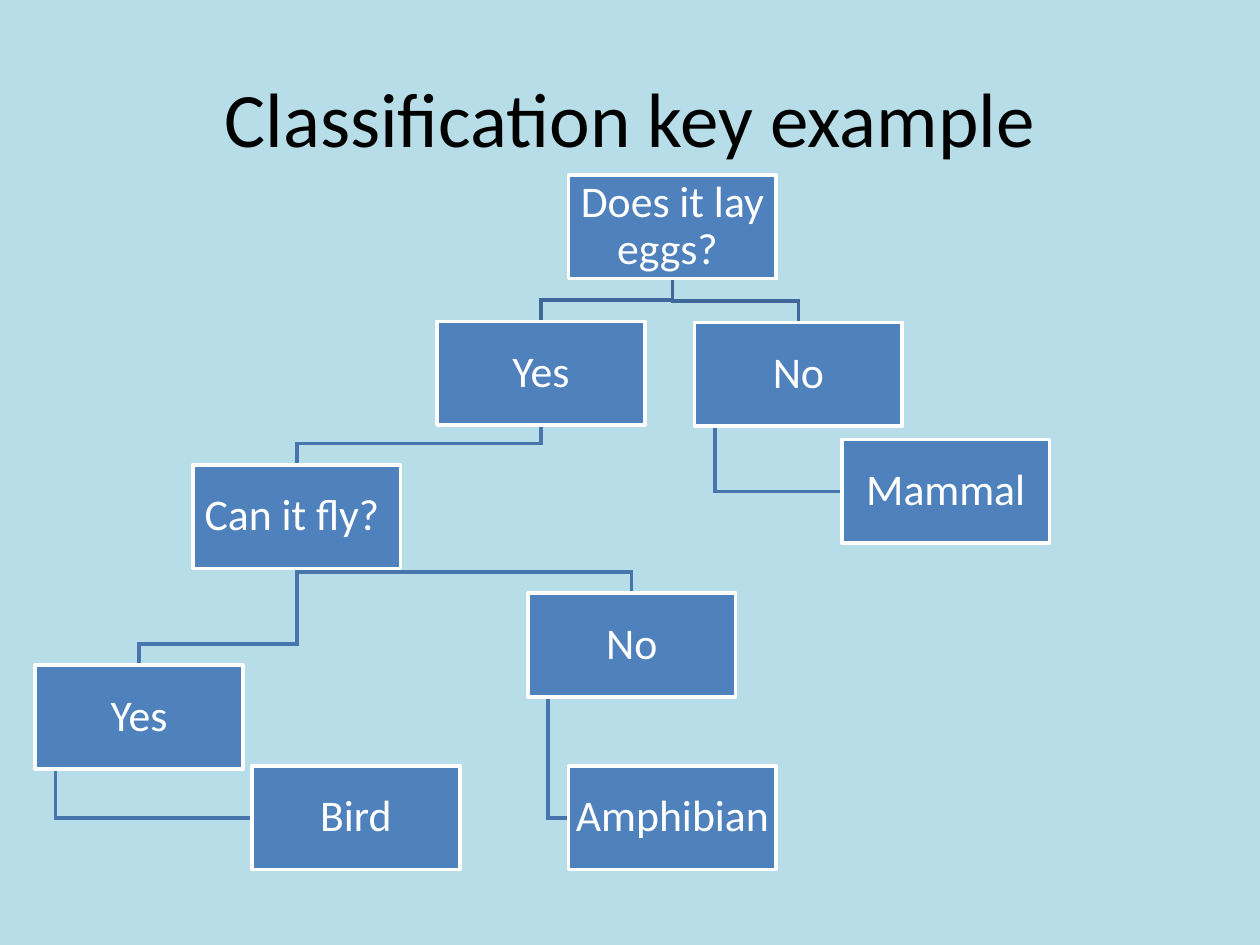
from dataclasses import dataclass

from lxml.etree import SubElement
from pptx import Presentation
from pptx.dml.color import RGBColor as Rgb
from pptx.enum.shapes import MSO_SHAPE as Kind
from pptx.enum.text import MSO_ANCHOR as Anchor, PP_ALIGN as Align
from pptx.oxml.ns import qn
from pptx.util import Cm, Pt


@dataclass(frozen=True)
class Theme:
    back: Rgb = Rgb(0xB7, 0xDE, 0xE8)
    ink: Rgb = Rgb(0, 0, 0)
    box: Rgb = Rgb(0x4F, 0x81, 0xBD)
    edge: Rgb = Rgb(0xFF, 0xFF, 0xFF)
    top: Rgb = Rgb(0x3F, 0x67, 0x97)
    low: Rgb = Rgb(0x48, 0x75, 0xAC)
    font: str = "Calibri"
    head: Pt = Pt(44)
    body: Pt = Pt(25)
    line: Pt = Pt(2)


def style(par, size, color):
    par.alignment = Align.CENTER
    par.font.name = theme.font
    par.font.size = size
    par.font.color.rgb = color


theme = Theme()
wide, high = 4.19, 2.09
drop, inset = 0.43, 0.41

nodes = {
    "eggs": ("Does it lay eggs? ", 11.46, 3.53),
    "lays": ("Yes", 8.81, 6.48),
    "fly": ("Can it fly? ", 3.89, 9.37),
    "walks": ("No", 10.64, 11.96),
    "frog": ("Amphibian", 11.46, 15.44),
    "flies": ("Yes", 0.71, 13.41),
    "bird": ("Bird", 5.08, 15.44),
    "live": ("No", 14, 6.5),
    "mammal": ("Mammal", 16.97, 8.86),
}
links = [
    ("live", "mammal"), ("eggs", "live"), ("flies", "bird"), ("fly", "flies"),
    ("walks", "frog"), ("fly", "walks"), ("lays", "fly"), ("eggs", "lays"),
]
leaves = {"mammal", "bird", "frog"}

deck = Presentation()
deck.slide_width, deck.slide_height = Cm(25.4), Cm(19.05)
slide = deck.slides.add_slide(deck.slide_layouts[5])
slide.background.fill.solid()
slide.background.fill.fore_color.rgb = theme.back

title = slide.shapes.title
title.left, title.top = Cm(1.27), Cm(0.76)
title.width, title.height = Cm(22.86), Cm(3.18)
title.text_frame.text = "Classification key example"
title.text_frame.vertical_anchor = Anchor.MIDDLE
style(title.text_frame.paragraphs[0], theme.head, theme.ink)

for start, end in links:
    _, left, top = nodes[start]
    _, x, y = nodes[end]
    base = top + high
    if end in leaves:
        stem = left + inset
        mid = y + high / 2
        route = [(stem, base), (stem, mid), (x, mid)]
    else:
        stem, goal = left + wide / 2, x + wide / 2
        bend = y - drop
        route = [(stem, base), (stem, bend), (goal, bend), (goal, y)]
    points = [(Cm(a), Cm(b)) for a, b in route]
    pen = slide.shapes.build_freeform(*points[0])
    pen.add_line_segments(points[1:], close=False)
    link = pen.convert_to_shape()
    link.shadow.inherit = False
    link.fill.background()
    link.line.color.rgb = theme.top if start == "eggs" else theme.low
    link.line.width = theme.line
    SubElement(link.line._get_or_add_ln(), qn("a:miter"), lim="800000")

for label, x, y in nodes.values():
    box = slide.shapes.add_shape(Kind.RECTANGLE, Cm(x), Cm(y), Cm(wide), Cm(high))
    box.shadow.inherit = False
    box.fill.solid()
    box.fill.fore_color.rgb = theme.box
    box.line.color.rgb = theme.edge
    box.line.width = theme.line
    frame = box.text_frame
    frame.word_wrap = True
    frame.vertical_anchor = Anchor.MIDDLE
    frame.margin_left = frame.margin_right = Cm(0.05)
    frame.margin_top = frame.margin_bottom = Cm(0.05)
    frame.text = label
    par = frame.paragraphs[0]
    par.line_spacing = 0.9
    style(par, theme.body, theme.edge)

deck.save("out.pptx")
